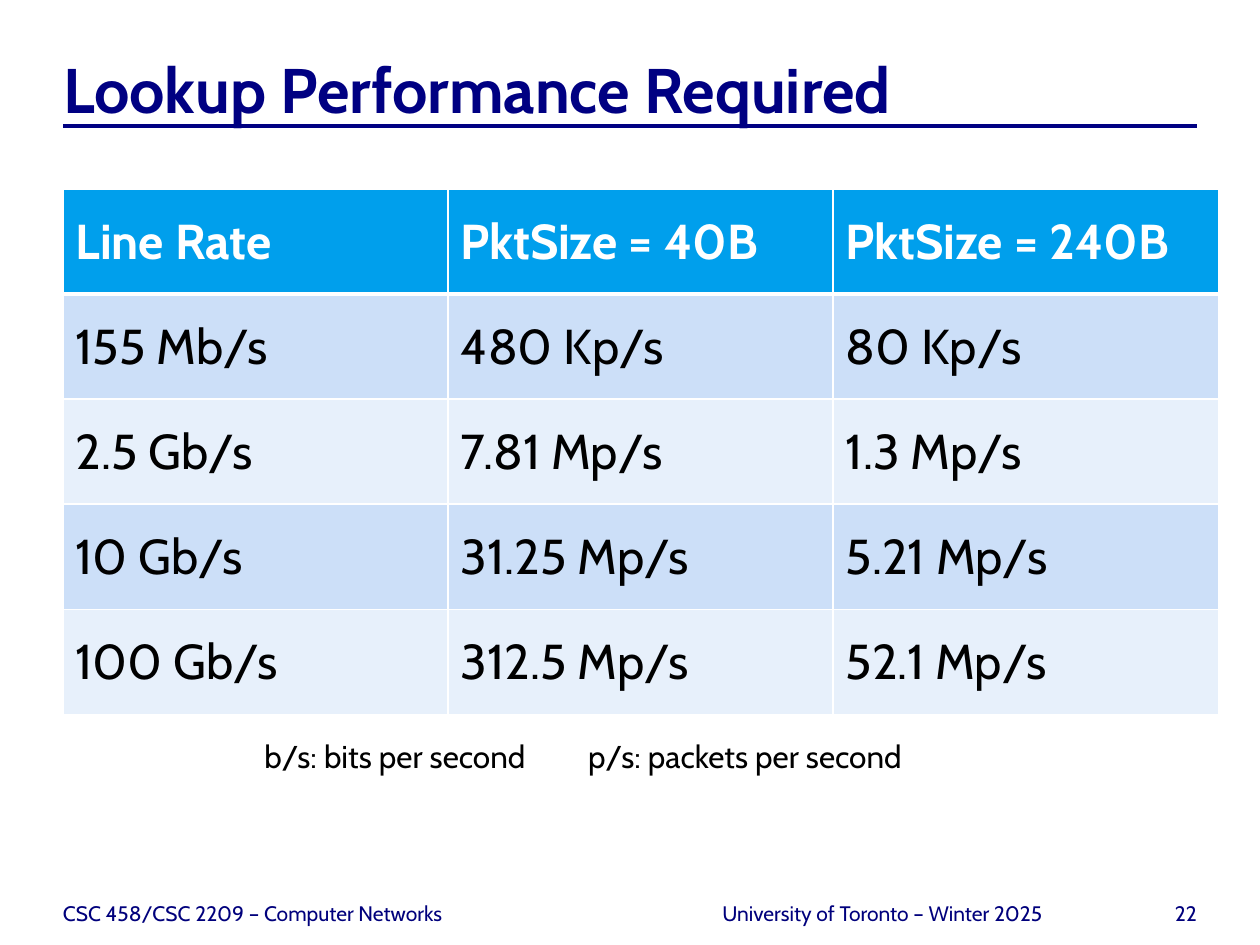
from lxml import etree
from pptx import Presentation
from pptx.dml.color import RGBColor
from pptx.enum.shapes import MSO_CONNECTOR
from pptx.enum.text import MSO_ANCHOR, MSO_AUTO_SIZE, PP_ALIGN
from pptx.oxml.ns import qn
from pptx.util import Inches, Pt

FONT = "Cabin"
NAVY = RGBColor(0x00, 0x00, 0x82)
FOOTER_NAVY = RGBColor(0x00, 0x00, 0x7C)
HEADER_BLUE = RGBColor(0x00, 0x9F, 0xEC)
BAND_DARK = RGBColor(0xCC, 0xDF, 0xF8)
BAND_LIGHT = RGBColor(0xE7, 0xF0, 0xFB)
WHITE = RGBColor(0xFF, 0xFF, 0xFF)
BLACK = RGBColor(0x00, 0x00, 0x00)


def set_text(frame, text, size, color, bold=False, align=PP_ALIGN.LEFT):
    frame.text = text
    paragraph = frame.paragraphs[0]
    paragraph.alignment = align
    paragraph.font.name = FONT
    paragraph.font.size = Pt(size)
    paragraph.font.color.rgb = color
    paragraph.font.bold = bold
    return paragraph


def add_border(cell, side, width):
    line = etree.SubElement(cell._tc.get_or_add_tcPr(), qn(f"a:ln{side}"), w=str(Pt(width)))
    fill = etree.SubElement(line, qn("a:solidFill"))
    etree.SubElement(fill, qn("a:srgbClr"), val=str(WHITE))


presentation = Presentation()
presentation.slide_width = Inches(10)
presentation.slide_height = Inches(7.5)
slide = presentation.slides.add_slide(presentation.slide_layouts[5])

# Rule under the title
rule = slide.shapes.add_connector(
    MSO_CONNECTOR.STRAIGHT, Inches(0.5), Inches(1), Inches(9.5), Inches(1))
rule.line.color.rgb = NAVY
rule.line.width = Pt(2.25)
etree.SubElement(rule._element.spPr, qn("a:effectLst"))

# Footer: course, page number, university
footers = [
    (0.5, 4.83, "CSC 458/CSC 2209 – Computer Networks", PP_ALIGN.LEFT),
    (8.67, 0.83, "22", PP_ALIGN.RIGHT),
    (5.42, 3.17, "University of Toronto – Winter 2025", PP_ALIGN.CENTER),
]
for left, width, text, align in footers:
    footer = slide.shapes.add_textbox(Inches(left), Inches(6.95), Inches(width), Inches(0.4))
    frame = footer.text_frame
    frame.word_wrap = True
    frame.vertical_anchor = MSO_ANCHOR.BOTTOM
    frame.margin_left = frame.margin_right = frame.margin_top = frame.margin_bottom = 0
    set_text(frame, text, 12, FOOTER_NAVY, align=align)

# Title
title = slide.shapes.title
title.left, title.top = Inches(0.5), Inches(0.33)
title.width, title.height = Inches(9), Inches(0.67)
frame = title.text_frame
frame.auto_size = MSO_AUTO_SIZE.NONE
frame.vertical_anchor = MSO_ANCHOR.BOTTOM
frame.margin_left = frame.margin_right = frame.margin_bottom = 0
frame.margin_top = Inches(0.05)
set_text(frame, "Lookup Performance Required", 36, NAVY, bold=True)

# Table of lookup rates
rates = [
    ("Line Rate", "PktSize = 40B", "PktSize = 240B"),
    ("155 Mb/s", "480 Kp/s", "80 Kp/s"),
    ("2.5 Gb/s", "7.81 Mp/s", "1.3 Mp/s"),
    ("10 Gb/s", "31.25 Mp/s", "5.21 Mp/s"),
    ("100 Gb/s", "312.5 Mp/s", "52.1 Mp/s"),
]
table = slide.shapes.add_table(
    len(rates), len(rates[0]), Inches(0.5), Inches(1.5), Inches(9.17), Inches(4.17)).table
for row, values in enumerate(rates):
    is_header = row == 0
    band = HEADER_BLUE if is_header else BAND_DARK if row % 2 else BAND_LIGHT
    for column, value in enumerate(values):
        cell = table.cell(row, column)
        cell.vertical_anchor = MSO_ANCHOR.MIDDLE
        set_text(cell.text_frame, value, 28, WHITE if is_header else BLACK, bold=is_header)
        for side in "LRTB":
            thick = (is_header and side == "B") or (row == 1 and side == "T")
            add_border(cell, side, 3 if thick else 1)
        cell.fill.solid()
        cell.fill.fore_color.rgb = band

# Legend of units, second entry set at a tab stop
legend = slide.shapes.add_textbox(Inches(2), Inches(5.8), Inches(5.44), Inches(0.4))
legend.text_frame.word_wrap = True
paragraph = set_text(
    legend.text_frame, "b/s: bits per second\tp/s: packets per second", 18, BLACK)
tabs = etree.Element(qn("a:tabLst"))
etree.SubElement(tabs, qn("a:tab"), pos=str(Inches(2.57)), algn="l")
paragraph._p.get_or_add_pPr().insert(0, tabs)

presentation.save("out.pptx")
